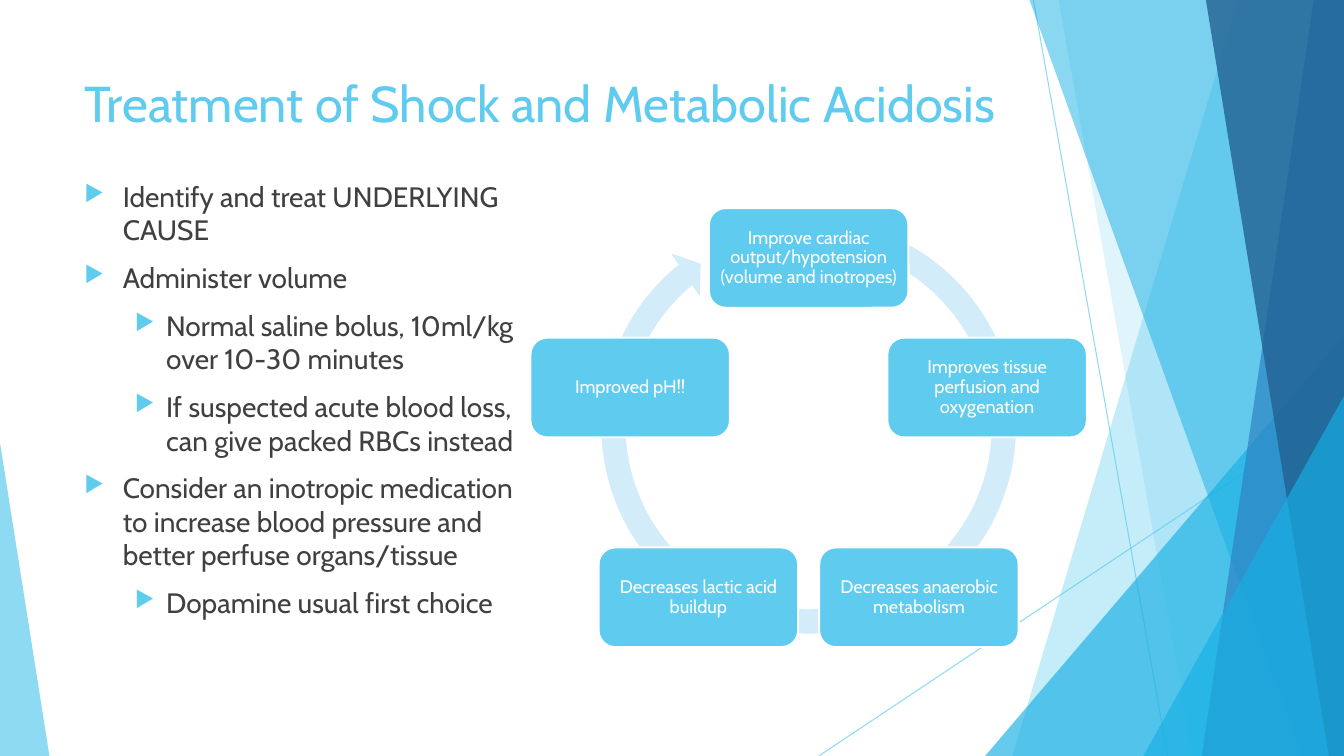
import math

import pptx
import pptx.dml.color
import pptx.enum.shapes
import pptx.enum.text
import pptx.oxml
import pptx.oxml.ns
import pptx.util

SLIDE_W = pptx.util.Inches(13.33)
SLIDE_H = pptx.util.Inches(7.5)
FONT = "Cabin"
SKY, BLUE, PALE, WHITE, INK = "5FCBEF", "17B0E4", "D2ECF9", "FFFFFF", "404040"
SHAPES = pptx.enum.shapes.MSO_SHAPE
ALIGN = pptx.enum.text.PP_ALIGN
ANCHOR = pptx.enum.text.MSO_ANCHOR

TREATMENTS = [
    (0, "Identify and treat UNDERLYING CAUSE"),
    (0, "Administer volume"),
    (1, "Normal saline bolus, 10ml/kg over 10-30 minutes"),
    (1, "If suspected acute blood loss, can give packed RBCs instead"),
    (0, "Consider an inotropic medication to increase blood pressure "
        "and better perfuse organs/tissue"),
    (1, "Dopamine usual first choice"),
]
INDENTS = [(0.38, 0.38), (0.81, 0.31)]  # text start and hang per level, inches

CYCLE = [
    "Improve cardiac output/hypotension (volume and inotropes)",
    "Improves tissue perfusion and oxygenation",
    "Decreases anaerobic metabolism",
    "Decreases lactic acid buildup",
    "Improved pH!!",
]


# Lengths are percentages of the slide's width and height
def across(percent):
    return round(SLIDE_W * percent / 100)


def down(percent):
    return round(SLIDE_H * percent / 100)


def frame(left, top, width, height):
    return across(left), down(top), across(width), down(height)


def add_xml(parent, tag, **attributes):
    child = pptx.oxml.parse_xml(f"<{tag} {pptx.oxml.ns.nsdecls('a')}/>")
    for key, value in attributes.items():
        child.set(key, str(value))
    parent.append(child)
    return child


def paint(color_format, hex_color, opacity=100):
    color_format.rgb = pptx.dml.color.RGBColor.from_string(hex_color)
    if opacity < 100:
        # the parent of the colour element is the solid fill
        solid = color_format._xFill
        add_xml(solid[0], "a:alpha", val=opacity * 1000)


def finish(shape, hex_color, opacity=100):
    shape.shadow.inherit = False
    shape.fill.solid()
    paint(shape.fill.fore_color, hex_color, opacity)
    shape.line.fill.background()
    return shape


def add_ray(slide, x1, y1, x2, y2):
    ray = slide.shapes.add_connector(
        pptx.enum.shapes.MSO_CONNECTOR.STRAIGHT,
        across(x1), down(y1), across(x2), down(y2))
    ray.line.width = pptx.util.Pt(0.75)
    paint(ray.line.color, SKY, 70)
    add_xml(ray._element.spPr, "a:effectLst")


def add_band(slide, top_x, bottom_x, hex_color, opacity):
    """Full-height band from a slanted left edge to the slide's right edge."""
    outline = slide.shapes.build_freeform(across(top_x), 0)
    outline.add_line_segments([(SLIDE_W, 0), (SLIDE_W, SLIDE_H),
                               (across(bottom_x), SLIDE_H)], close=True)
    finish(outline.convert_to_shape(), hex_color, opacity)


def add_corner(slide, box, apex, hex_color, opacity):
    corner = slide.shapes.add_shape(SHAPES.ISOSCELES_TRIANGLE, *frame(*box))
    corner.adjustments[0] = apex
    finish(corner, hex_color, opacity)


def format_runs(paragraph, size, hex_color):
    for run in paragraph.runs:
        run.font.name = FONT
        run.font.size = pptx.util.Pt(size)
        paint(run.font.color, hex_color)


def add_text_area(slide, box):
    area = slide.shapes.add_textbox(*frame(*box)).text_frame
    area.word_wrap = True
    area.vertical_anchor = ANCHOR.TOP
    return area


def add_treatments(slide, box):
    area = add_text_area(slide, box)
    area.text = "\n".join(text for _, text in TREATMENTS)
    for paragraph, (level, _) in zip(area.paragraphs, TREATMENTS):
        start, hang = INDENTS[level]
        paragraph.level = level
        paragraph.space_before = pptx.util.Pt(10)
        format_runs(paragraph, 20, INK)
        properties = paragraph._p.get_or_add_pPr()
        properties.set("marL", str(pptx.util.Inches(start)))
        properties.set("indent", str(-pptx.util.Inches(hang)))
        add_xml(add_xml(properties, "a:buClr"), "a:srgbClr", val=SKY)
        add_xml(properties, "a:buSzPct", val=80000)
        add_xml(properties, "a:buChar", char="▶")


def add_step(slide, center_x, center_y, text):
    width, height = across(14.85), down(13.2)
    step = finish(slide.shapes.add_shape(
        SHAPES.ROUNDED_RECTANGLE, center_x - width // 2,
        center_y - height // 2, width, height), SKY)
    paint_line = step.line
    paint_line.fill.solid()
    paint(paint_line.color, WHITE)
    paint_line.width = pptx.util.Pt(1.5)
    label = step.text_frame
    label.word_wrap = True
    label.vertical_anchor = ANCHOR.MIDDLE
    label.margin_left = label.margin_right = pptx.util.Inches(0.05)
    label.margin_top = label.margin_bottom = pptx.util.Inches(0.05)
    label.text = text
    paragraph = label.paragraphs[0]
    paragraph.alignment = ALIGN.CENTER
    paragraph.line_spacing = 0.9
    format_runs(paragraph, 13, WHITE)


def add_cycle(slide):
    center_x = across(60.17)
    # Ring arrow behind the steps
    side = across(32.86)
    ring = finish(slide.shapes.add_shape(
        SHAPES.CIRCULAR_ARROW, center_x - side // 2,
        down(56.4) - side // 2, side, side), PALE)
    for index, value in enumerate([0.055, 3.307, 138.541, 173.386, 0.058]):
        ring.adjustments[index] = value
    # Steps at equal angles, clockwise from the top
    orbit = across(13.96)
    for index, text in enumerate(CYCLE):
        angle = 2 * math.pi * index / len(CYCLE)
        add_step(slide, center_x + round(orbit * math.sin(angle)),
                 down(58.93) - round(orbit * math.cos(angle)), text)


def add_backdrop(slide):
    add_ray(slide, 76.9, 0, 86.88, 100)
    add_ray(slide, 100, 53.73, 60.92, 100)
    add_band(slide, 92.12, 75.32, SKY, 36)
    add_band(slide, 78.77, 88.75, SKY, 20)
    add_corner(slide, (73.3, 44.4, 26.7, 55.6), 1, BLUE, 66)
    add_band(slide, 76.6, 96.85, BLUE, 50)
    add_band(slide, 97.75, 89.42, "2E83C3", 70)
    add_band(slide, 89.72, 98.87, "226292", 80)
    add_corner(slide, (85.07, 52.4, 14.93, 47.6), 1, BLUE, 66)
    add_corner(slide, (0, 58.53, 3.68, 41.47), 0, SKY, 70)


def main():
    deck = pptx.Presentation()
    deck.slide_width, deck.slide_height = SLIDE_W, SLIDE_H
    slide = deck.slides.add_slide(deck.slide_layouts[6])
    add_backdrop(slide)
    # Title
    heading = add_text_area(slide, (5.55, 8.93, 78.84, 12.13))
    heading.text = "Treatment of Shock and Metabolic Acidosis"
    format_runs(heading.paragraphs[0], 36, SKY)
    # Treatment list and cycle
    add_treatments(slide, (5.55, 23.07, 34.36, 71.6))
    add_cycle(slide)
    deck.save("out.pptx")


if __name__ == "__main__":
    main()
